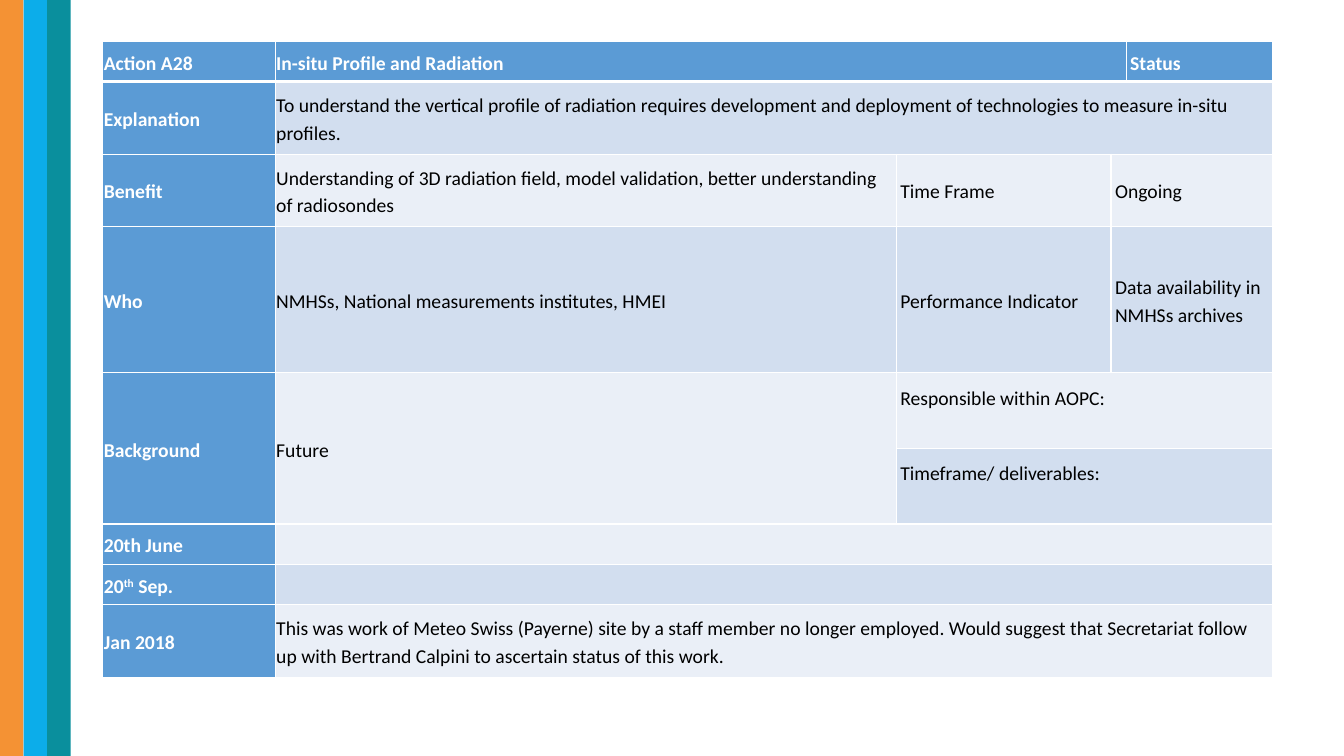
import pptx
import pptx.dml.color
import pptx.enum.shapes
import pptx.enum.text
import pptx.oxml
import pptx.oxml.ns
import pptx.util

Inches = pptx.util.Inches
Pt = pptx.util.Pt

COLORS = {
    "orange": "F49234", "sky": "0CADEA", "teal": "0A8F9D",
    "header": "5B9BD5", "dark_band": "D2DEEF", "light_band": "EAEFF7",
    "white": "FFFFFF", "black": "000000",
}
COLUMN_WIDTHS = [1.71, 6.16, 2.13, 0.15, 1.45]
ROW_HEIGHTS = [0.4, 0.72, 0.72, 1.45, 0.75, 0.75, 0.4, 0.4, 0.72]

# Each cell: row, column, row span, column span, runs; "^" starts a superscript run
CELLS = [
    (0, 0, 1, 1, ["Action A28"]),
    (0, 1, 1, 3, ["In-situ Profile and Radiation"]),
    (0, 4, 1, 1, ["Status"]),
    (1, 0, 1, 1, ["Explanation"]),
    (1, 1, 1, 4, ["To understand the vertical profile of radiation requires development "
                  "and deployment of technologies to measure in-situ profiles."]),
    (2, 0, 1, 1, ["Benefit"]),
    (2, 1, 1, 1, ["Understanding of 3D radiation field, model validation, "
                  "better understanding of radiosondes"]),
    (2, 2, 1, 1, ["Time Frame"]),
    (2, 3, 1, 2, ["Ongoing"]),
    (3, 0, 1, 1, ["Who"]),
    (3, 1, 1, 1, ["NMHSs, National measurements institutes, HMEI"]),
    (3, 2, 1, 1, ["Performance Indicator"]),
    (3, 3, 1, 2, ["Data availability in NMHSs archives"]),
    (4, 0, 2, 1, ["Background"]),
    (4, 1, 2, 1, ["Future"]),
    (4, 2, 1, 3, ["Responsible within AOPC:"]),
    (5, 2, 1, 3, ["Timeframe/ deliverables:"]),
    (6, 0, 1, 1, ["20th June"]),
    (6, 1, 1, 4, []),
    (7, 0, 1, 1, ["20", "^th", " Sep."]),
    (7, 1, 1, 4, []),
    (8, 0, 1, 1, ["Jan 2018"]),
    (8, 1, 1, 4, ["This was work of Meteo Swiss (Payerne) site by a staff member no longer "
                  "employed. Would suggest that Secretariat follow up with Bertrand Calpini "
                  "to ascertain status of this work."]),
]


def rgb(name):
    return pptx.dml.color.RGBColor.from_string(COLORS[name])


def add_stripes(page, left, top, width, height):
    """Vertical colour stripes that fill the given box."""
    names = ["orange", "sky", "teal"]
    stripe_width = width / len(names)
    for index, name in enumerate(names):
        stripe = page.shapes.add_shape(
            pptx.enum.shapes.MSO_SHAPE.RECTANGLE,
            Inches(left + index * stripe_width), Inches(top),
            Inches(stripe_width), Inches(height))
        stripe.shadow.inherit = False
        stripe.fill.solid()
        stripe.fill.fore_color.rgb = rgb(name)
        stripe.line.fill.background()


def set_borders(cell, bottom_width):
    properties = cell._tc.get_or_add_tcPr()
    widths = {"lnL": 1, "lnR": 1, "lnT": 1, "lnB": bottom_width}
    for index, (side, width) in enumerate(widths.items()):
        properties.insert(index, pptx.oxml.parse_xml(
            f'<a:{side} {pptx.oxml.ns.nsdecls("a")} w="{Pt(width)}"><a:solidFill>'
            f'<a:srgbClr val="{COLORS["white"]}"/></a:solidFill></a:{side}>'))


def write_cell(cell, runs, is_heading):
    para = cell.text_frame.paragraphs[0]
    para.line_spacing = 1.15
    para.font.size = Pt(14)
    for text in runs:
        span = para.add_run()
        span.text = text.lstrip("^")
        span.font.name = "Calibri"
        span.font.size = Pt(14)
        span.font.bold = is_heading
        span.font.color.rgb = rgb("white" if is_heading else "black")
        if text.startswith("^"):
            span._r.get_or_add_rPr().set("baseline", "30000")


def add_action_table(page, left, top, width, height):
    """Action sheet with merged cells and banded rows."""
    table = page.shapes.add_table(
        len(ROW_HEIGHTS), len(COLUMN_WIDTHS),
        Inches(left), Inches(top), Inches(width), Inches(height)).table
    for column, size in zip(table.columns, COLUMN_WIDTHS):
        column.width = Inches(size)
    for row, size in zip(table.rows, ROW_HEIGHTS):
        row.height = Inches(size)

    # Borders and fills
    for row in range(len(ROW_HEIGHTS)):
        for column in range(len(COLUMN_WIDTHS)):
            cell = table.cell(row, column)
            set_borders(cell, 3 if row == 0 else 1)
            band = "dark_band" if row % 2 else "light_band"
            cell.fill.solid()
            cell.fill.fore_color.rgb = rgb("header" if row == 0 or column == 0 else band)

    # Spans and text
    for row, column, row_span, column_span, runs in CELLS:
        cell = table.cell(row, column)
        if row_span * column_span > 1:
            cell.merge(table.cell(row + row_span - 1, column + column_span - 1))
        side, edge = (0.01, 0.01) if column < 2 else (0.04, 0.02)
        cell.margin_left = cell.margin_right = Inches(side)
        cell.margin_top = cell.margin_bottom = Inches(edge)
        cell.vertical_anchor = pptx.enum.text.MSO_ANCHOR.MIDDLE
        # The two fill-in cells leave room below their label
        if row in (4, 5) and column == 2:
            cell.vertical_anchor = pptx.enum.text.MSO_ANCHOR.TOP
            cell.margin_top = Inches(0.1)
        write_cell(cell, runs, row == 0 or column == 0)


def main():
    deck = pptx.Presentation()
    deck.slide_width, deck.slide_height = Inches(13.33), Inches(7.5)
    page = deck.slides.add_slide(deck.slide_layouts[6])
    add_stripes(page, 0, 0, 0.7, 7.5)
    add_action_table(page, 1.02, 0.41, sum(COLUMN_WIDTHS), sum(ROW_HEIGHTS))
    deck.save("out.pptx")


if __name__ == "__main__":
    main()
